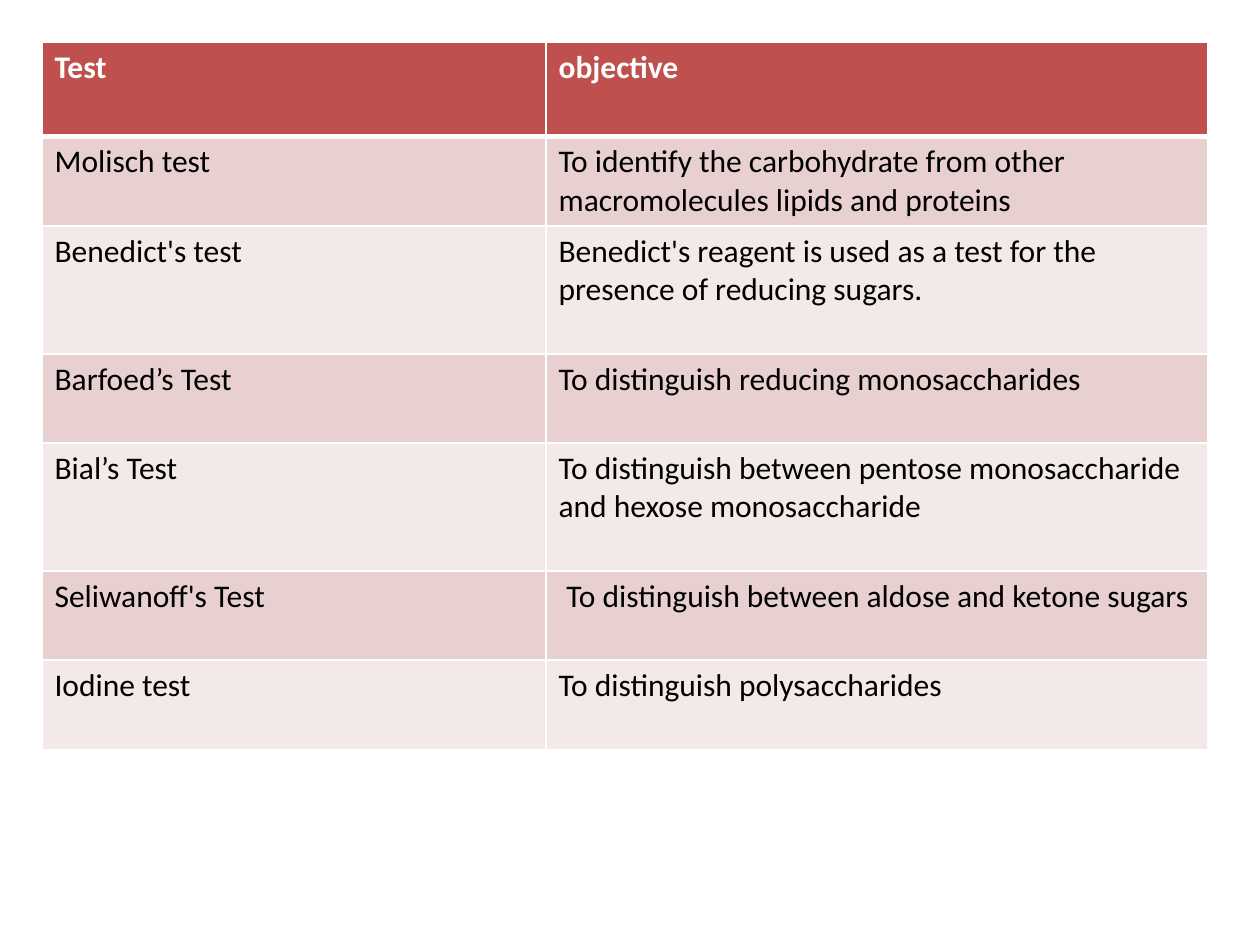
"""Build a slide with a table of carbohydrate tests and their objectives."""
from dataclasses import dataclass

from lxml import etree
from pptx import Presentation
from pptx import util as u
from pptx.dml.color import RGBColor
from pptx.enum import text
from pptx.oxml.ns import qn


@dataclass(frozen=True)
class Theme:
    font: str = "Calibri"
    size: int = 18
    head: str = "C0504D"
    bands: tuple = ("E8D0D0", "F4E9E9")
    light: str = "FFFFFF"
    dark: str = "000000"
    thin: int = 1
    thick: int = 3


ROWS = [
    ("Test", "objective"),
    ("Molisch test", "To identify the carbohydrate from other macromolecules lipids and proteins"),
    ("Benedict's test", "Benedict's reagent is used as a test for the presence of reducing sugars."),
    ("Barfoed’s Test", "To distinguish reducing monosaccharides"),
    ("Bial’s Test", "To distinguish between pentose monosaccharide and hexose monosaccharide"),
    ("Seliwanoff's Test", "To distinguish between aldose and ketone sugars"),
    ("Iodine test", "To distinguish polysaccharides"),
]
WIDTHS = (288, 378)
HEIGHTS = (54, 51, 73, 51, 73, 51, 51)
INDENT = {(5, 1): 4.5}


def write(frame, words, font, size, color, bold=False):
    para = frame.paragraphs[0]
    para.text = words
    para.alignment = text.PP_ALIGN.LEFT
    style = para.runs[0].font
    style.name, style.size, style.bold = font, u.Pt(size), bold
    style.color.rgb = RGBColor.from_string(color)


class Deck:
    def __init__(self, theme, width, height):
        self.theme = theme
        self.show = Presentation()
        self.show.slide_width, self.show.slide_height = u.Pt(width), u.Pt(height)
        self.slide = self.show.slides.add_slide(self.show.slide_layouts[6])

    def edge(self, cell, row):
        t = self.theme
        sizes = {"L": t.thin, "R": t.thin,
                 "T": t.thick if row == 1 else t.thin,
                 "B": t.thick if row == 0 else t.thin}
        props = cell._tc.get_or_add_tcPr()
        for place, (side, size) in enumerate(sizes.items()):
            line = etree.Element(qn(f"a:ln{side}"), w=str(u.Pt(size)))
            fill = etree.SubElement(line, qn("a:solidFill"))
            etree.SubElement(fill, qn("a:srgbClr"), val=t.light)
            props.insert(place, line)

    def cell(self, cell, words, row, indent):
        t = self.theme
        head = row == 0
        cell.fill.solid()
        cell.fill.fore_color.rgb = RGBColor.from_string(t.head if head else t.bands[(row - 1) % 2])
        cell.margin_left = u.Pt(7.2 + indent)
        write(cell.text_frame, words, font=t.font, size=t.size,
              color=t.light if head else t.dark, bold=head)
        self.edge(cell, row)

    def table(self, left, top, rows, widths, heights, indents):
        grid = self.slide.shapes.add_table(
            len(rows), len(widths), u.Pt(left), u.Pt(top),
            u.Pt(sum(widths)), u.Pt(sum(heights))).table
        for col, width in zip(grid.columns, widths):
            col.width = u.Pt(width)
        for r, (line, height) in enumerate(zip(rows, heights)):
            grid.rows[r].height = u.Pt(height)
            for c, words in enumerate(line):
                self.cell(grid.cell(r, c), words, r, indents.get((r, c), 0))


def main():
    deck = Deck(Theme(), 720, 540)
    deck.table(24, 24, ROWS, WIDTHS, HEIGHTS, INDENT)
    deck.show.save("out.pptx")


if __name__ == "__main__":
    main()
